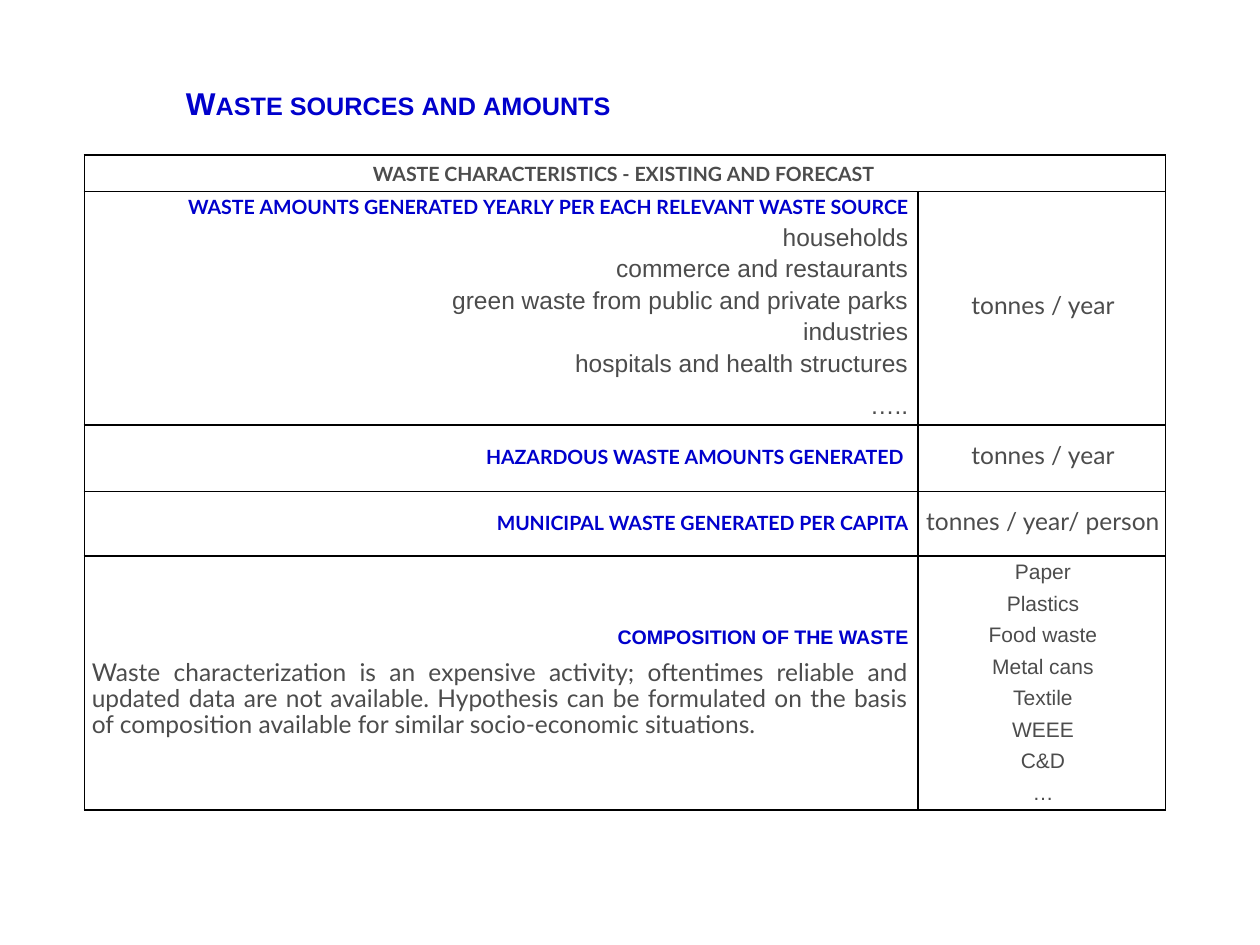
from lxml import etree
from pptx import Presentation
from pptx import util as u
from pptx.dml.color import RGBColor
from pptx.enum import text
from pptx.oxml import ns

BLUE, GREY, BLACK = "0000CC", "4C4C4C", "000000"
LEFT, CENTER = text.PP_ALIGN.LEFT, text.PP_ALIGN.CENTER
RIGHT, JUSTIFY = text.PP_ALIGN.RIGHT, text.PP_ALIGN.JUSTIFY


def add_text(frame, content, size=14, font="Lato", color=GREY, heading=False,
             align=CENTER, line=12, before=6, after=0, indent=0):
    """Fill the empty first paragraph, or append one to the frame."""
    paragraph = frame.paragraphs[0]
    if paragraph.runs:
        paragraph = frame.add_paragraph()
    paragraph.alignment = align
    paragraph.space_before, paragraph.space_after = u.Pt(before), u.Pt(after)
    if line:
        paragraph.line_spacing = u.Pt(line)
    if indent:
        properties = paragraph._p.get_or_add_pPr()
        properties.set("marL", str(u.Cm(indent)))
        properties.set("indent", "0")
    run = paragraph.add_run()
    run.text = content
    run.font.size, run.font.name, run.font.bold = u.Pt(size), font, heading
    run.font.color.rgb = RGBColor.from_string(color)
    if heading:
        run._r.get_or_add_rPr().set("cap", "small")


def format_cell(cell, right_margin):
    """Set margins, no fill and thin black borders."""
    cell.margin_left = cell.margin_top = u.Cm(0.15)
    cell.margin_right, cell.margin_bottom = u.Cm(right_margin), u.Cm(0.1)
    properties = cell._tc.get_or_add_tcPr()
    for side in ("lnL", "lnR", "lnT", "lnB"):
        border = etree.SubElement(properties, ns.qn("a:" + side), w=str(u.Pt(1)))
        fill = etree.SubElement(border, ns.qn("a:solidFill"))
        etree.SubElement(fill, ns.qn("a:srgbClr"), val=BLACK)
    cell.fill.background()


presentation = Presentation()
presentation.slide_width, presentation.slide_height = u.Cm(25.4), u.Cm(19.05)
slide = presentation.slides.add_slide(presentation.slide_layouts[6])

# Table grid
column_widths = [16.81, 4.98]
row_heights = [0.74, 4.7, 1.34, 1.3, 5.12]
table_shape = slide.shapes.add_table(
    len(row_heights), len(column_widths), u.Cm(1.7), u.Cm(3.12),
    u.Cm(sum(column_widths)), u.Cm(sum(row_heights)))
table = table_shape.table
table.first_row = table.horz_banding = False
for column, width in zip(table.columns, column_widths):
    column.width = u.Cm(width)
for row, height in zip(table.rows, row_heights):
    row.height = u.Cm(height)
    for cell, right_margin in zip(row.cells, (0.2, 0.1)):
        format_cell(cell, right_margin)
        cell.vertical_anchor = text.MSO_ANCHOR.MIDDLE

# Header row
header = table.cell(0, 0)
header.merge(table.cell(0, 1))
header.vertical_anchor = text.MSO_ANCHOR.TOP
add_text(header.text_frame, "waste characteristics - existing and forecast",
         heading=True, line=14, after=6)

# Row headings
headings = [
    ("waste amounts generated yearly per each relevant waste source", "Lato", 0),
    ("hazardous waste amounts generated ", "Lato", 6),
    ("municipal waste generated per capita", "Lato", 6),
    ("composition of the waste", "Arial", 0),
]
for row_index, (heading, font, after) in enumerate(headings, start=1):
    add_text(table.cell(row_index, 0).text_frame, heading, font=font,
             color=BLUE, heading=True, align=RIGHT, after=after)

# Waste sources
sources = table.cell(1, 0)
sources.vertical_anchor = text.MSO_ANCHOR.TOP
for source, after in [("households", 0), ("commerce and restaurants", 0),
                      ("green waste from public and private parks", 0),
                      ("industries", 0), ("hospitals and health structures", 6),
                      ("…..", 6)]:
    add_text(sources.text_frame, source, font="Arial", align=RIGHT,
             after=after, indent=0.64)

# Units
units = [("tonnes / year", 0), ("tonnes / year", 6), ("tonnes / year/ person", 6)]
for row_index, (unit, after) in enumerate(units, start=1):
    add_text(table.cell(row_index, 1).text_frame, unit, after=after)

# Composition
add_text(table.cell(4, 0).text_frame,
         "Waste characterization is an expensive activity; oftentimes reliable "
         "and updated data are not available. Hypothesis can be formulated on "
         "the basis of composition available for similar socio-economic "
         "situations.", align=JUSTIFY, line=15)
for material in ["Paper", "Plastics", "Food waste", "Metal cans", "Textile",
                 "WEEE", "C&D", "…"]:
    add_text(table.cell(4, 1).text_frame, material, size=12, font="Arial")

# Title
title = slide.shapes.add_textbox(u.Cm(3.5), u.Cm(1.57), u.Cm(16.4), u.Cm(1.02))
title.text_frame.word_wrap = True
title.text_frame.vertical_anchor = text.MSO_ANCHOR.MIDDLE
add_text(title.text_frame, "Waste sources and amounts", size=18, font="Arial",
         color=BLUE, heading=True, align=LEFT, line=None, before=0)

presentation.save("out.pptx")
